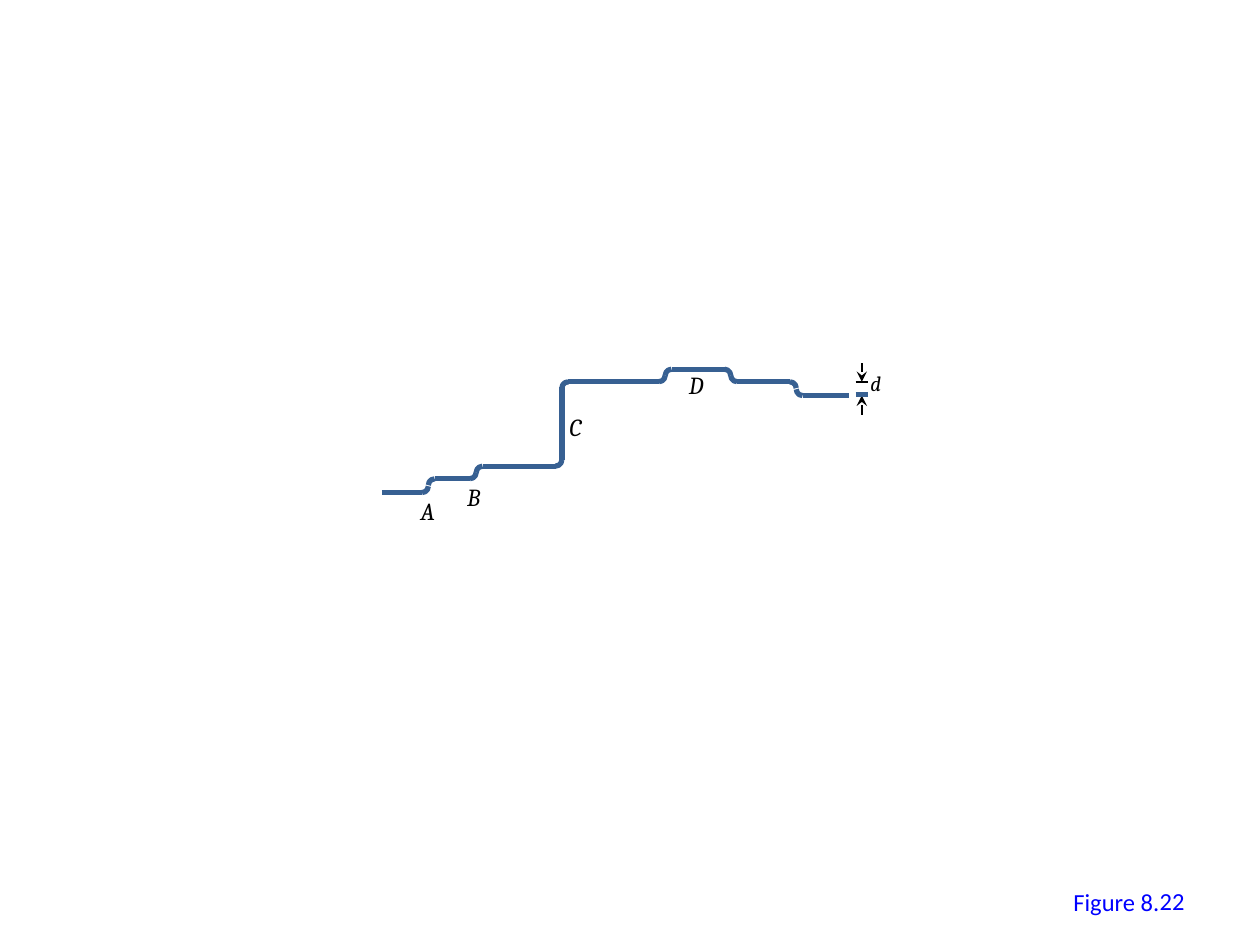
from lxml.etree import SubElement
from pptx import Presentation
from pptx.dml.color import RGBColor
from pptx.enum.shapes import MSO_CONNECTOR, MSO_SHAPE
from pptx.enum.text import MSO_ANCHOR, PP_ALIGN
from pptx.oxml.ns import qn
from pptx.util import Inches, Pt

COLORS = {"track": "376092", "ink": "000000", "caption": "0000FF"}

prs = Presentation()
prs.slide_width, prs.slide_height = Inches(10), Inches(7.5)
slide = prs.slides.add_slide(prs.slide_layouts[6])


def add_line(shapes, start, end, color, width):
    line = shapes.add_connector(MSO_CONNECTOR.STRAIGHT, *map(Inches, start + end))
    line.line.color.rgb = RGBColor.from_string(COLORS[color])
    line.line.width = Pt(width)
    SubElement(line._element.spPr, qn("a:effectLst"))
    return line


def add_label(text, box, size, font, color, italic=False):
    label = slide.shapes.add_textbox(*map(Inches, box))
    label.text_frame.text = text
    run_font = label.text_frame.paragraphs[0].runs[0].font
    run_font.size, run_font.name, run_font.italic = Pt(size), font, italic
    run_font.color.rgb = RGBColor.from_string(COLORS[color])
    return label.text_frame


# Figure caption and its number
add_label("Figure 8.", (8.42, 6.99, 0.89, 0.34), 14, "Calibri", "caption").word_wrap = False
number = add_label("22", (7.17, 6.95, 2.33, 0.4), 14, "Calibri", "caption")
number.word_wrap = True
number.vertical_anchor = MSO_ANCHOR.MIDDLE
number.paragraphs[0].alignment = PP_ALIGN.RIGHT

# Step height d: upper mark and the two arrows that close in on it
add_line(slide.shapes, (6.79, 3.03), (6.89, 3.03), "ink", 1)
for tip, tail in ((3.03, 2.88), (3.14, 3.29)):
    arrow = add_line(slide.shapes, (6.84, tip), (6.84, tail), "ink", 1)
    SubElement(arrow.line._get_or_add_ln(), qn("a:headEnd"), type="stealth")

# Track: each riser joins two levels with rounded corners and short runs
track = slide.shapes.add_group_shape().shapes
CORNER, RUN = 0.1, 0.15
LEVELS = [3.91, 3.80, 3.70, 3.03, 2.93, 3.03, 3.14]
RISERS = [3.40, 3.78, 4.46, 5.28, 5.80, 6.32]
for x, before, after in zip(RISERS, LEVELS, LEVELS[1:]):
    if after < before:
        rotation, flips = 270, (("flipH", "flipV"), ())
        tops = (before - CORNER, after)
    else:
        rotation, flips = 90, (("flipH",), ("flipV",))
        tops = (before, after - CORNER)
    for left, top, corner_flips in zip((x - CORNER, x), tops, flips):
        corner = track.add_shape(MSO_SHAPE.ARC, Inches(left), Inches(top),
                                 Inches(CORNER), Inches(CORNER))
        corner.rotation = rotation
        for flip in corner_flips:
            corner._element.spPr.xfrm.set(flip, "1")
        corner.shadow.inherit = False
        corner.fill.background()
        corner.line.color.rgb = RGBColor.from_string(COLORS["track"])
        corner.line.width = Pt(3)
    inner, outer = CORNER / 2, CORNER / 2 + RUN
    add_line(track, (x - outer, before), (x - inner, before), "track", 3)
    add_line(track, (x + inner, after), (x + outer, after), "track", 3)

# Long treads, the tall riser and the lower mark of d
for start, end in [
    ((3.03, 3.91), (3.26, 3.91)),
    ((3.97, 3.70), (4.29, 3.70)),
    ((4.46, 3.65), (4.46, 3.07)),
    ((4.64, 3.03), (5.10, 3.03)),
    ((5.34, 2.93), (5.72, 2.93)),
    ((5.87, 3.03), (6.26, 3.03)),
    ((6.40, 3.14), (6.74, 3.14)),
    ((6.79, 3.13), (6.89, 3.13)),
]:
    add_line(track, start, end, "track", 3)

for letter, box, size in [
    ("A", (3.24, 3.89, 0.37, 0.34), 14),
    ("B", (3.61, 3.78, 0.37, 0.34), 14),
    ("C", (4.42, 3.22, 0.39, 0.34), 14),
    ("D", (5.37, 2.89, 0.40, 0.34), 14),
    ("d", (6.81, 2.89, 0.33, 0.30), 12),
]:
    add_label(letter, box, size, "Cambria", "ink", italic=True).word_wrap = False

prs.save("out.pptx")
